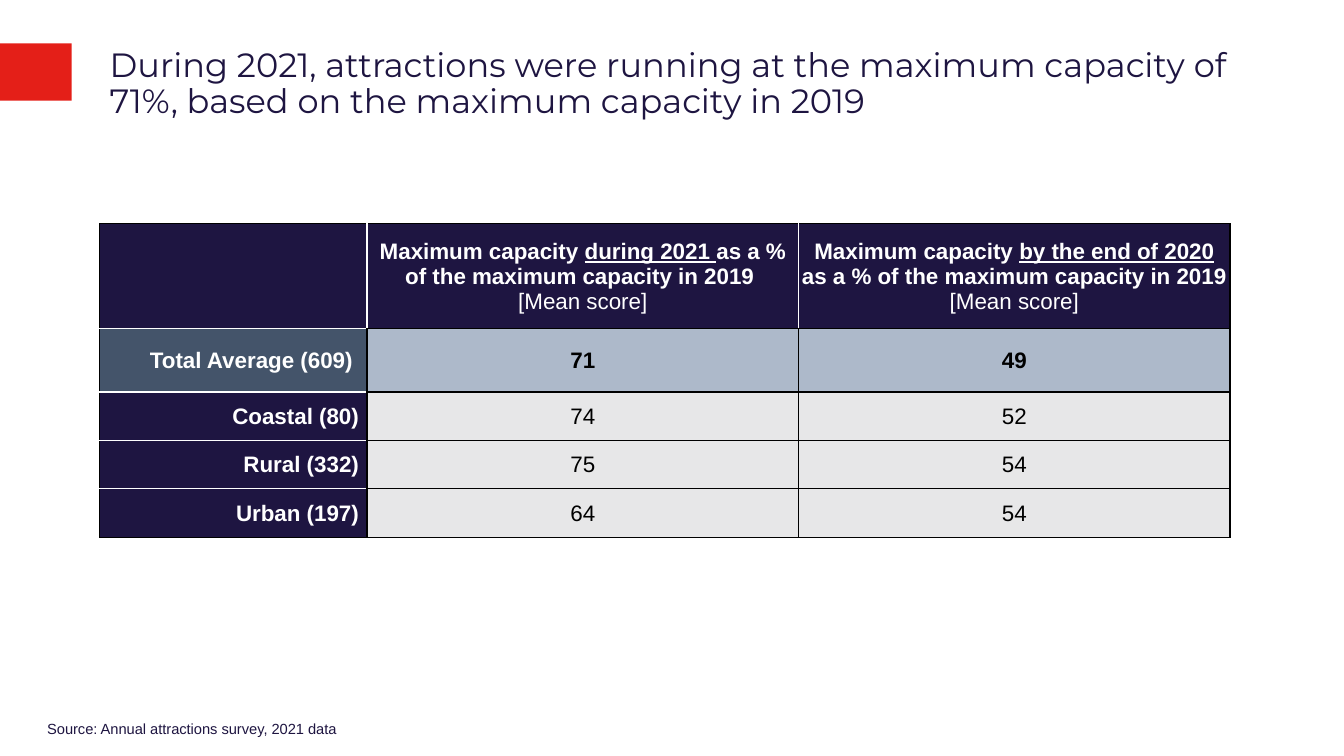
from dataclasses import dataclass

from lxml import etree
from pptx import Presentation
from pptx import util as u
from pptx.dml.color import RGBColor
from pptx.enum import shapes, text
from pptx.oxml import ns

PX = 9144
NAVY = RGBColor(0x1E, 0x15, 0x41)
RED = RGBColor(0xE4, 0x1F, 0x18)
SLATE = RGBColor(0x44, 0x54, 0x6A)
BLUE_GREY = RGBColor(0xAD, 0xB9, 0xCA)
LIGHT_GREY = RGBColor(0xE7, 0xE7, 0xE8)
WHITE = RGBColor(0xFF, 0xFF, 0xFF)
BLACK = RGBColor(0, 0, 0)

LEFT, CENTER, RIGHT = text.PP_ALIGN.LEFT, text.PP_ALIGN.CENTER, text.PP_ALIGN.RIGHT
TOP, BOTTOM = text.MSO_ANCHOR.TOP, text.MSO_ANCHOR.BOTTOM


@dataclass(frozen=True)
class Run:
    text: str
    bold: bool = True
    underline: bool = False


@dataclass(frozen=True)
class Caption:
    text: str
    box: tuple[int, int, int, int]
    font: str
    size: float
    anchor: text.MSO_ANCHOR
    inset: int
    space_before: int = 0


@dataclass(frozen=True)
class Region:
    label: str
    values: tuple[int, int]
    label_fill: RGBColor = NAVY
    value_fill: RGBColor = LIGHT_GREY
    bold: bool = False


CAPTIONS = [
    Caption("Source: Annual attractions survey, 2021 data", (37, 703, 590, 29),
            "Arial", 10.5, BOTTOM, 0, 10),
    Caption("During 2021, attractions were running at the maximum capacity of 71%, "
            "based on the maximum capacity in 2019", (99, 43, 1170, 94),
            "Montserrat", 24, TOP, 5),
]
MEAN = Run("[Mean score]", bold=False)
SHARE = Run("as a % of the maximum capacity in 2019 ")
CAPACITY = Run("Maximum capacity ")
HEADERS = [
    [[]],
    [[CAPACITY, Run("during 2021 ", underline=True), SHARE], [MEAN]],
    [[CAPACITY, Run("by the end of 2020 ", underline=True), SHARE, MEAN]],
]
REGIONS = [
    Region("Total Average (609) ", (71, 49), SLATE, BLUE_GREY, True),
    Region("Coastal (80)", (74, 52)),
    Region("Rural (332)", (75, 54)),
    Region("Urban (197)", (64, 54)),
]
COL_WIDTHS = [265, 428, 428]
ROW_HEIGHTS = [104, 63, 48, 48, 48]


def px(*lengths: int) -> list[u.Emu]:
    """Turn pixel lengths into EMU."""
    return [u.Emu(length * PX) for length in lengths]


def add_caption(slide, caption: Caption) -> None:
    """Add a wrapped text box in navy."""
    tf = slide.shapes.add_textbox(*px(*caption.box)).text_frame
    tf.word_wrap = True
    tf.vertical_anchor = caption.anchor
    tf.margin_left, tf.margin_right = px(10, 10)
    tf.margin_top, tf.margin_bottom = px(caption.inset, caption.inset)
    p = tf.paragraphs[0]
    p.text = caption.text
    p.alignment = LEFT
    p.line_spacing = 0.9
    p.space_before = u.Pt(caption.space_before)
    p.font.name, p.font.size = caption.font, u.Pt(caption.size)
    p.font.color.rgb = NAVY


def set_borders(cell, row: int, col: int) -> None:
    """Rule the cell in black, with white between neighbouring dark cells."""
    last_row, last_col = len(ROW_HEIGHTS) - 1, len(COL_WIDTHS) - 1
    white = {
        "lnL": row == 0 and col > 0,
        "lnR": row == 0 and col < last_col,
        "lnT": col == 0 and row > 0,
        "lnB": col == 0 and row < last_row,
    }
    tc_pr = cell._tc.get_or_add_tcPr()
    for side, is_white in white.items():
        ln = etree.SubElement(tc_pr, ns.qn(f"a:{side}"), w=str(u.Pt(1)))
        fill = etree.SubElement(ln, ns.qn("a:solidFill"))
        etree.SubElement(fill, ns.qn("a:srgbClr"), val=str(WHITE if is_white else BLACK))


def fill_cell(table, row: int, col: int, paragraphs: list[list[Run]],
              fill: RGBColor, color: RGBColor) -> None:
    """Write and style one table cell."""
    cell = table.cell(row, col)
    is_label = row > 0 and col == 0
    side = 8 if is_label else 1
    cell.margin_left, cell.margin_top, cell.margin_right, cell.margin_bottom = px(side, 1, side, 0)
    cell.vertical_anchor = text.MSO_ANCHOR.MIDDLE
    set_borders(cell, row, col)
    cell.fill.solid()
    cell.fill.fore_color.rgb = fill
    tf = cell.text_frame
    for i, runs in enumerate(paragraphs):
        p = tf.add_paragraph() if i else tf.paragraphs[0]
        p.alignment = RIGHT if is_label else CENTER
        p.font.name, p.font.size = "Arial", u.Pt(16)
        p.font.color.rgb = color
        for run in runs:
            r = p.add_run()
            r.text = run.text
            r.font.bold, r.font.underline = run.bold, run.underline


def add_capacity_table(slide) -> None:
    """Add the table of mean capacity by region."""
    frame = slide.shapes.add_table(len(ROW_HEIGHTS), len(COL_WIDTHS),
                                   *px(99, 222, sum(COL_WIDTHS), sum(ROW_HEIGHTS)))
    table = frame.table
    table.first_row = table.horz_banding = False
    for column, width in zip(table.columns, px(*COL_WIDTHS)):
        column.width = width
    for table_row, height in zip(table.rows, px(*ROW_HEIGHTS)):
        table_row.height = height
    for col, paragraphs in enumerate(HEADERS):
        fill_cell(table, 0, col, paragraphs, NAVY, WHITE)
    for row, region in enumerate(REGIONS, 1):
        fill_cell(table, row, 0, [[Run(region.label)]], region.label_fill, WHITE)
        for col, value in enumerate(region.values, 1):
            fill_cell(table, row, col, [[Run(str(value), region.bold)]],
                      region.value_fill, BLACK)


def main() -> None:
    """Build and save the slide."""
    prs = Presentation()
    prs.slide_width, prs.slide_height = px(1333, 750)
    slide = prs.slides.add_slide(prs.slide_layouts[6])
    sp = slide.shapes.add_shape(shapes.MSO_SHAPE.RECTANGLE, *px(0, 43, 71, 57))
    sp.shadow.inherit = False
    sp.fill.solid()
    sp.fill.fore_color.rgb = RED
    sp.line.fill.background()
    for caption in CAPTIONS:
        add_caption(slide, caption)
    add_capacity_table(slide)
    prs.save("out.pptx")


if __name__ == "__main__":
    main()
